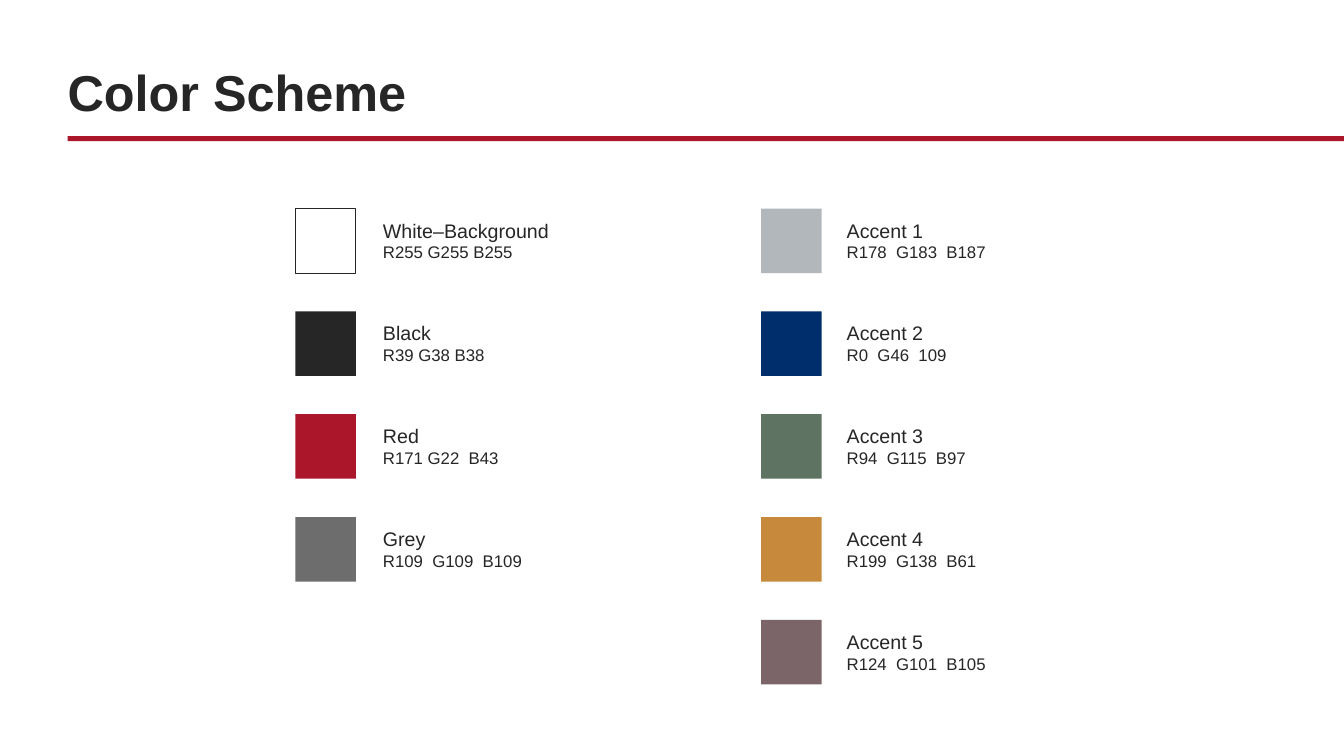
from pptx import Presentation
from pptx.dml.color import RGBColor
from pptx.enum.shapes import MSO_SHAPE
from pptx.enum.text import MSO_ANCHOR
from pptx.util import Inches, Pt

COLORS = {
    "white": "FFFFFF",
    "black": "272626",
    "red": "AB162B",
    "grey": "6D6D6D",
    "accent1": "B2B7BB",
    "accent2": "002E6D",
    "accent3": "5E7361",
    "accent4": "C78A3D",
    "accent5": "7C6569",
}

BASE_SWATCHES = [
    ("white", "White–Background", "R255 G255 B255"),
    ("black", "Black", "R39 G38 B38"),
    ("red", "Red", "R171 G22  B43"),
    ("grey", "Grey", "R109  G109  B109"),
]

ACCENT_SWATCHES = [
    ("accent1", "Accent 1", "R178  G183  B187"),
    ("accent2", "Accent 2", "R0  G46  109"),
    ("accent3", "Accent 3", "R94  G115  B97"),
    ("accent4", "Accent 4", "R199  G138  B61"),
    ("accent5", "Accent 5", "R124  G101  B105"),
]

ROW_PITCH = 1.02


def rgb(name):
    return RGBColor.from_string(COLORS[name])


def add_rect(slide, x, y, w, h, color, outline=None):
    sp = slide.shapes.add_shape(
        MSO_SHAPE.RECTANGLE, Inches(x), Inches(y), Inches(w), Inches(h))
    sp.shadow.inherit = False
    sp.fill.solid()
    sp.fill.fore_color.rgb = rgb(color)
    if outline:
        sp.line.color.rgb = rgb(outline)
        sp.line.width = Pt(0.75)
    else:
        sp.line.fill.background()


def add_text_frame(slide, x, y, w, h, anchor):
    tf = slide.shapes.add_textbox(
        Inches(x), Inches(y), Inches(w), Inches(h)).text_frame
    tf.word_wrap = True
    tf.vertical_anchor = anchor
    return tf


def add_run(p, text, size, bold=False):
    r = p.add_run()
    r.text = text
    r.font.name = "Arial"
    r.font.size = Pt(size)
    r.font.bold = bold
    r.font.color.rgb = rgb("black")


def add_header(slide, x, y, w, h):
    add_rect(slide, x, y + 0.97, w, 0.05, "red")
    tf = add_text_frame(slide, x, y, w - 0.67, h, MSO_ANCHOR.BOTTOM)
    tf.margin_left = tf.margin_right = 0
    p = tf.paragraphs[0]
    p.line_spacing = Pt(38)
    add_run(p, "Color Scheme", 36, bold=True)


def add_swatch(slide, x, y, label_x, color, name, values):
    outline = "black" if color == "white" else None
    add_rect(slide, x, y, 0.6, 0.64, color, outline)
    tf = add_text_frame(slide, label_x, y - 0.03, 2.2, 0.69, MSO_ANCHOR.MIDDLE)
    add_run(tf.paragraphs[0], name, 14)
    add_run(tf.add_paragraph(), values, 12)


def add_swatch_column(slide, x, y, label_x, swatches):
    for row, swatch in enumerate(swatches):
        add_swatch(slide, x, y + row * ROW_PITCH, label_x, *swatch)


def main():
    prs = Presentation()
    prs.slide_width = Inches(13.33)
    prs.slide_height = Inches(7.5)
    slide = prs.slides.add_slide(prs.slide_layouts[6])
    slide.background.fill.solid()
    slide.background.fill.fore_color.rgb = rgb("white")
    add_header(slide, 0.67, 0.38, 12.66, 0.88)
    add_swatch_column(slide, 2.93, 2.07, 3.7, BASE_SWATCHES)
    add_swatch_column(slide, 7.55, 2.07, 8.3, ACCENT_SWATCHES)
    prs.save("out.pptx")


if __name__ == "__main__":
    main()
